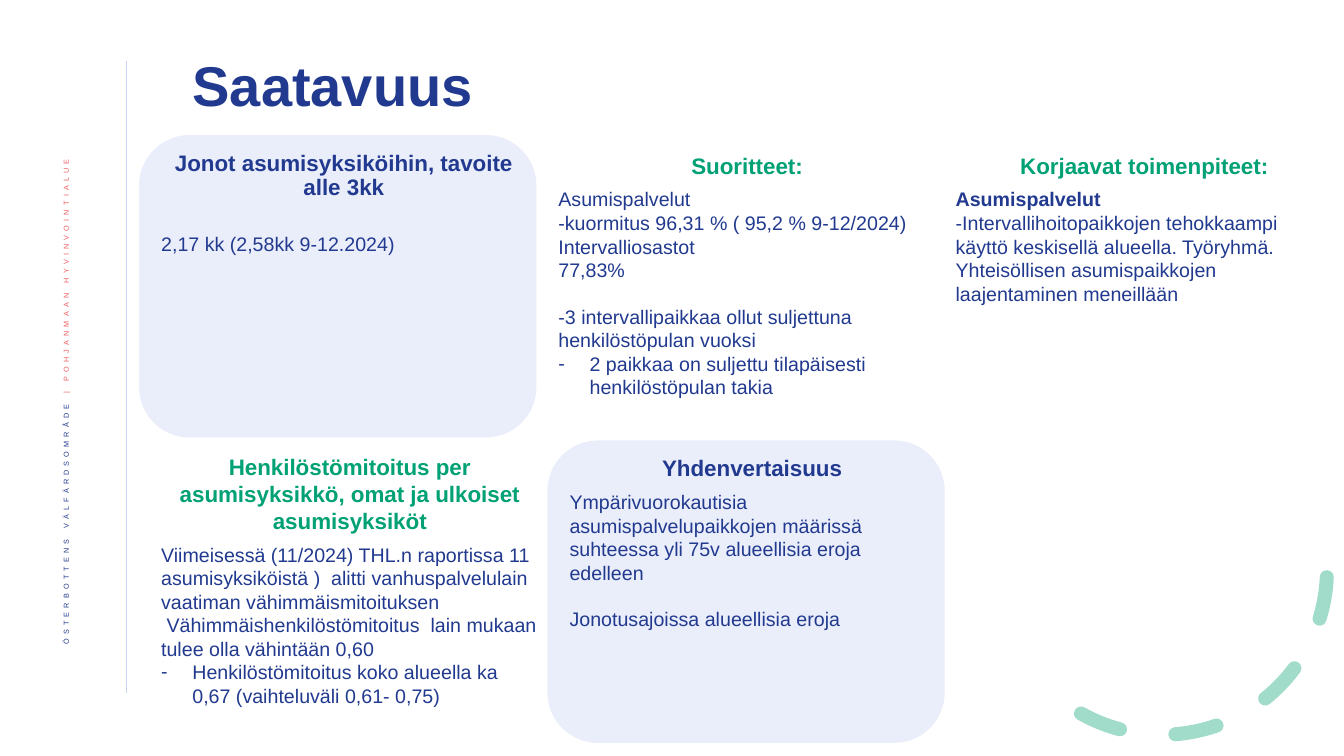
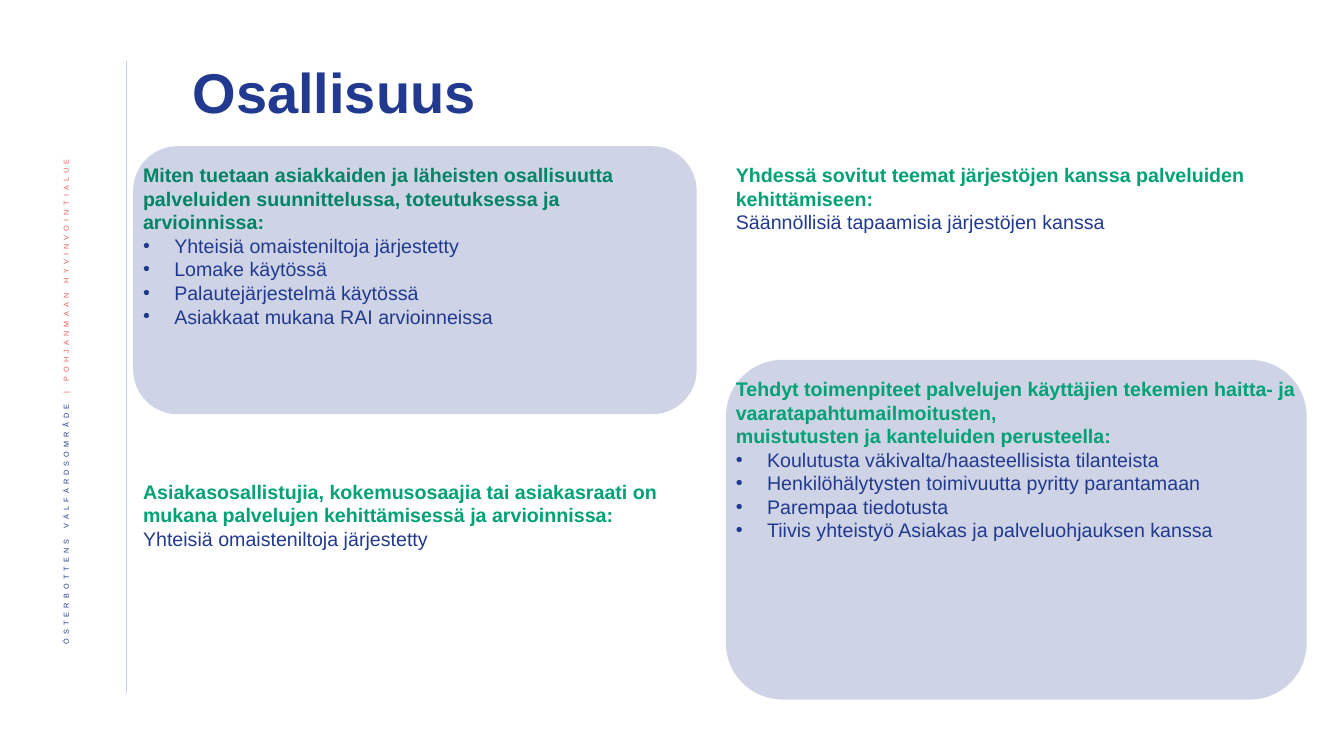
"""Build two slides on the availability of care and on client participation."""
import pptx
import pptx.dml.color
import pptx.enum.dml
import pptx.enum.shapes
import pptx.enum.text
import pptx.oxml
import pptx.oxml.ns
import pptx.util

Inches = pptx.util.Inches
Pt = pptx.util.Pt
RGBColor = pptx.dml.color.RGBColor
PP_ALIGN = pptx.enum.text.PP_ALIGN
MSO_ANCHOR = pptx.enum.text.MSO_ANCHOR
MSO_SHAPE = pptx.enum.shapes.MSO_SHAPE
qn = pptx.oxml.ns.qn

NAVY = RGBColor(0x21, 0x3A, 0x8F)
GREEN = RGBColor(0x00, 0xA1, 0x74)
DARK_GREEN = RGBColor(0x00, 0x84, 0x64)
LAVENDER = RGBColor(0xC9, 0xD2, 0xF2)
CORAL = RGBColor(0xEB, 0x5C, 0x5F)
FONT = "Arial"
COLS = [1.5 + 3.94 * i for i in range(3)]

SLIDES = [
    {
        "title": "Saatavuus", "title_box": (1.81, 0.45, 10.2, 0.85),
        "head": (16, PP_ALIGN.CENTER, 6), "arc": True,
        "fill": (LAVENDER, 38),
        "panels": [(1.38, 1.34, 3.94, 3), (5.43, 4.37, 3.94, 3)],
        "boxes": [
            ((COLS[0], 1.46, 3.82, 1.14), NAVY, [
                ("head", "Jonot asumisyksiköihin, tavoite alle 3kk"),
                ("gap", "2,17 kk (2,58kk 9-12.2024)")]),
            ((COLS[1], 1.46, 3.94, 2.57), GREEN, [
                ("head", "Suoritteet:"),
                ("text", "Asumispalvelut"),
                ("text", "-kuormitus 96,31 % ( 95,2 % 9-12/2024)"),
                ("text", "Intervalliosastot"),
                ("text", "77,83%"),
                ("gap", "-3 intervallipaikkaa ollut suljettuna henkilöstöpulan vuoksi"),
                ("-", "2 paikkaa on suljettu tilapäisesti henkilöstöpulan takia")]),
            ((COLS[2], 1.46, 3.94, 2.34), GREEN, [
                ("head", "Korjaavat toimenpiteet:"),
                ("bold", "Asumispalvelut"),
                ("text", "-Intervallihoitopaikkojen tehokkaampi käyttö keskisellä "
                         "alueella. Työryhmä."),
                ("text", "Yhteisöllisen asumispaikkojen laajentaminen meneillään")]),
            ((5.55, 4.49, 3.82, 1.84), NAVY, [
                ("head", "Yhdenvertaisuus"),
                ("text", "Ympärivuorokautisia asumispalvelupaikkojen määrissä "
                         "suhteessa yli 75v alueellisia eroja edelleen"),
                ("gap", "Jonotusajoissa alueellisia eroja")]),
            ((COLS[0], 4.45, 3.94, 2.64), GREEN, [
                ("head", "Henkilöstömitoitus per asumisyksikkö, omat ja ulkoiset "
                         "asumisyksiköt"),
                ("text", "Viimeisessä (11/2024) THL.n raportissa 11 asumisyksiköistä )  "
                         "alitti vanhuspalvelulain vaatiman vähimmäismitoituksen"),
                ("text", " Vähimmäishenkilöstömitoitus  lain mukaan tulee olla "
                         "vähintään 0,60"),
                ("-", "Henkilöstömitoitus koko alueella ka 0,67 (vaihteluväli 0,61- 0,75)")]),
        ],
    },
    {
        "title": "Osallisuus", "title_box": (1.81, 0.45, 9.98, 0.99),
        "head": (14, PP_ALIGN.LEFT, 0), "arc": False,
        "fill": (NAVY, 22),
        "panels": [(1.32, 1.45, 5.59, 2.66), (7.2, 3.57, 5.76, 3.37)],
        "boxes": [
            ((1.32, 1.57, 5.59, 1.75), DARK_GREEN, [
                ("head", "Miten tuetaan asiakkaiden ja läheisten osallisuutta palveluiden "
                         "suunnittelussa, toteutuksessa ja arvioinnissa:"),
                ("•", "Yhteisiä omaisteniltoja järjestetty"),
                ("•", "Lomake käytössä"),
                ("•", "Palautejärjestelmä käytössä"),
                ("•", "Asiakkaat mukana RAI arvioinneissa")]),
            ((7.2, 1.57, 5.76, 0.81), GREEN, [
                ("head", "Yhdessä sovitut teemat järjestöjen kanssa palveluiden "
                         "kehittämiseen:"),
                ("text", "Säännöllisiä tapaamisia järjestöjen kanssa")]),
            ((1.32, 4.71, 5.59, 1.28), GREEN, [
                ("head", "Asiakasosallistujia, kokemusosaajia tai asiakasraati on mukana "
                         "palvelujen kehittämisessä ja arvioinnissa:"),
                ("text", "Yhteisiä omaisteniltoja järjestetty")]),
            ((7.2, 3.69, 5.76, 1.75), GREEN, [
                ("head", "Tehdyt toimenpiteet palvelujen käyttäjien tekemien haitta- ja "
                         "vaaratapahtumailmoitusten,"),
                ("head", "muistutusten ja kanteluiden perusteella:"),
                ("•", "Koulutusta väkivalta/haasteellisista tilanteista"),
                ("•", "Henkilöhälytysten toimivuutta pyritty parantamaan"),
                ("•", "Parempaa tiedotusta"),
                ("•", "Tiivis yhteistyö Asiakas ja palveluohjauksen kanssa")]),
        ],
    },
]


def add_run(p, text, size, color, bold=False):
    r = p.add_run()
    r.text = text
    r.font.name = FONT
    r.font.size = Pt(size)
    r.font.bold = bold
    r.font.color.rgb = color
    return r


def set_alpha(parent, percent):
    clr = next(parent.iter(qn("a:srgbClr")))
    clr.append(pptx.oxml.parse_xml(
        f'<a:alpha {pptx.oxml.ns.nsdecls("a")} val="{percent * 1000}"/>'))


prs = pptx.Presentation()
prs.slide_width = Inches(13.33)
prs.slide_height = Inches(7.5)

for data in SLIDES:
    s = prs.slides.add_slide(prs.slide_layouts[5])

    title = s.shapes.title
    title.left, title.top, title.width, title.height = map(Inches, data["title_box"])
    tf = title.text_frame
    tf.vertical_anchor = MSO_ANCHOR.MIDDLE
    p = tf.paragraphs[0]
    p.alignment = PP_ALIGN.LEFT
    p.line_spacing = 0.9
    add_run(p, data["title"], 40, NAVY, True)

    rule = s.shapes.add_connector(
        pptx.enum.shapes.MSO_CONNECTOR.STRAIGHT,
        Inches(1.25), Inches(0.61), Inches(1.25), Inches(6.88))
    rule.line.color.rgb = LAVENDER
    rule.line.width = Pt(0.5)
    rule._element.spPr.append(pptx.oxml.parse_xml(
        f'<a:effectLst {pptx.oxml.ns.nsdecls("a")}/>'))

    side = s.shapes.add_textbox(Inches(0.42), Inches(1.42), Inches(0.52), Inches(5.73))
    tf = side.text_frame
    tf.word_wrap = True
    tf.vertical_anchor = MSO_ANCHOR.MIDDLE
    tf._txBody.bodyPr.set("vert", "vert270")
    p = tf.paragraphs[0]
    p.alignment = PP_ALIGN.RIGHT
    p.line_spacing = 0.9
    for text, color in [("ÖSTERBOTTENS VÄLFÄRDSOMRÅDE ", NAVY),
                        ("| POHJANMAAN HYVINVOINTIALUE ", CORAL)]:
        rPr = add_run(p, text, 9, color)._r.get_or_add_rPr()
        rPr.set("baseline", "30000")
        rPr.set("spc", "300")

    if data["arc"]:
        arc = s.shapes.add_shape(MSO_SHAPE.ARC, Inches(9.89), Inches(4.02),
                                 Inches(3.27), Inches(3.27))
        arc.rotation = 98.9
        arc.adjustments[0] = 158.174
        arc.adjustments[1] = 17.814
        arc.shadow.inherit = False
        arc.fill.background()
        arc.line.color.rgb = GREEN
        arc.line.width = Pt(10)
        arc.line.dash_style = pptx.enum.dml.MSO_LINE.DASH
        ln = arc._element.spPr.find(qn("a:ln"))
        ln.set("cap", "rnd")
        set_alpha(ln, 36)

    fill, opacity = data["fill"]
    for box in data["panels"]:
        panel = s.shapes.add_shape(MSO_SHAPE.ROUNDED_RECTANGLE, *map(Inches, box))
        panel.shadow.inherit = False
        panel.fill.solid()
        panel.fill.fore_color.rgb = fill
        panel.line.fill.background()
        set_alpha(panel._element.spPr, opacity)

    head_size, head_align, head_after = data["head"]
    for box, head_color, lines in data["boxes"]:
        tf = s.shapes.add_textbox(*map(Inches, box)).text_frame
        tf.word_wrap = True
        tf.auto_size = pptx.enum.text.MSO_AUTO_SIZE.SHAPE_TO_FIT_TEXT
        for i, (kind, text) in enumerate(lines):
            p = tf.add_paragraph() if i else tf.paragraphs[0]
            if kind == "head":
                p.alignment = head_align
                p.space_after = Pt(head_after)
                if head_color == NAVY:
                    p.line_spacing = 0.9
                add_run(p, text, head_size, head_color, True)
                continue
            if kind == "gap":
                p.space_before = Pt(16.5)
            elif kind in "-•":
                pPr = p._p.get_or_add_pPr()
                pPr.set("marL", str(Inches(0.31)))
                pPr.set("indent", str(-Inches(0.31)))
                pPr.append(pptx.oxml.parse_xml(
                    f'<a:buFont {pptx.oxml.ns.nsdecls("a")} typeface="{FONT}"/>'))
                pPr.append(pptx.oxml.parse_xml(
                    f'<a:buChar {pptx.oxml.ns.nsdecls("a")} char="{kind}"/>'))
            add_run(p, text, 14, NAVY, kind == "bold")

prs.save("out.pptx")
